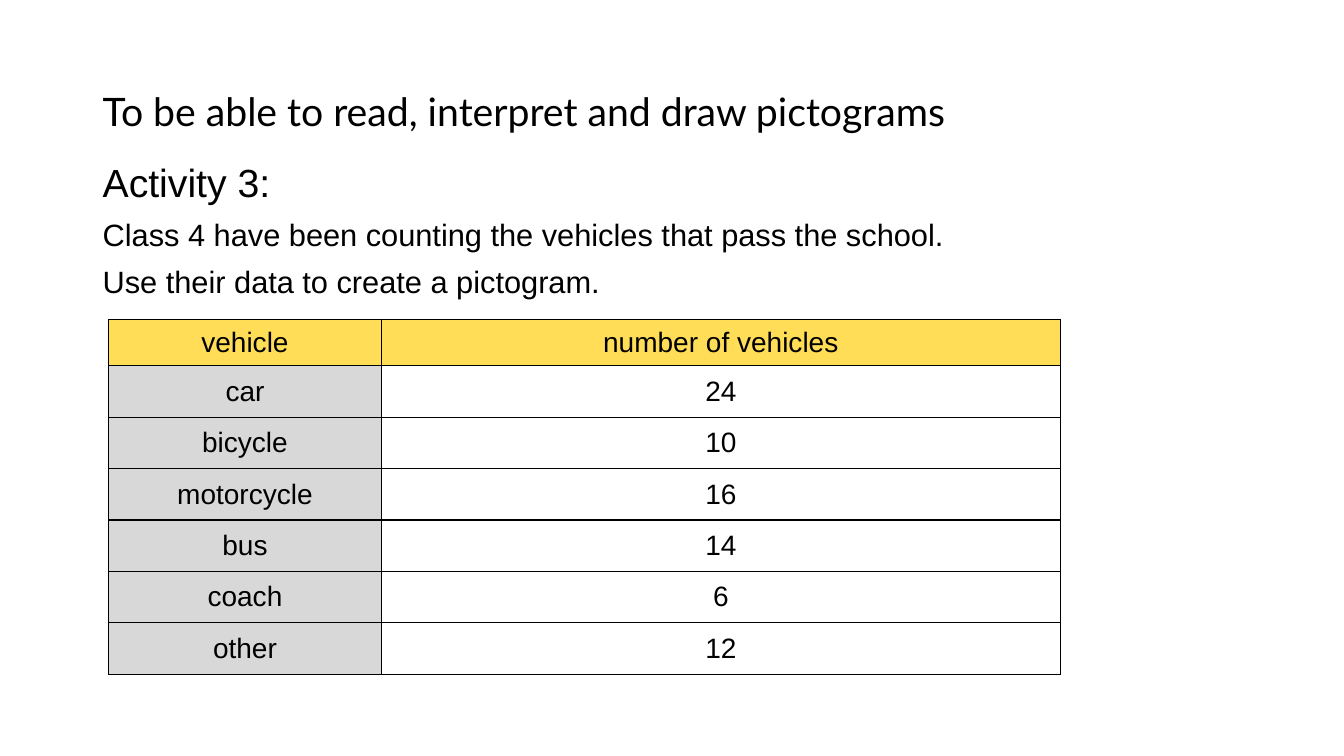
import pptx
import pptx.util
import pptx.oxml
import pptx.oxml.ns
import pptx.dml.color
import pptx.enum.text

PX = 9144
HUES = {"ink": "000000", "head": "FFDD57", "side": "D8D8D8", "cell": "FFFFFF"}
MID = pptx.enum.text.MSO_ANCHOR.MIDDLE
TOP = pptx.enum.text.MSO_ANCHOR.TOP
MARGINS = {"margin_left": 10 * PX, "margin_right": 10 * PX,
           "margin_top": 5 * PX, "margin_bottom": 5 * PX}
TITLE = [("To be able to read, interpret and draw pictograms", 28)]
TASK = [
    ("Activity 3:", 28),
    ("Class 4 have been counting the vehicles that pass the school.", 22),
    ("Use their data to create a pictogram.", 22),
]
COUNTS = [
    ("vehicle", "number of vehicles"),
    ("car", "24"),
    ("bicycle", "10"),
    ("motorcycle", "16"),
    ("bus", "14"),
    ("coach", "6"),
    ("other", "12"),
]


def tint(name):
    """Return the named colour."""
    return pptx.dml.color.RGBColor.from_string(HUES[name])


def apply(target, values):
    """Set each format value on the target."""
    for key, value in values.items():
        setattr(target, key, value)


def style(para, size, face):
    """Set the font of a paragraph."""
    apply(para.font, {"size": pptx.util.Pt(size), "name": face})
    para.font.color.rgb = tint("ink")


def add_text(slide, box, lines, face, anchor):
    """Place lines of text in the box."""
    frame = slide.shapes.add_textbox(*(n * PX for n in box)).text_frame
    apply(frame, {"word_wrap": True, "vertical_anchor": anchor, **MARGINS})
    for i, (text, size) in enumerate(lines):
        para = frame.add_paragraph() if i else frame.paragraphs[0]
        para.text = text
        gap = pptx.util.Pt(10 if i else 0)
        apply(para, {"line_spacing": 0.9, "space_before": gap})
        style(para, size, face)


def edge(cell):
    """Draw a thin line on each side of a cell."""
    props = cell._tc.get_or_add_tcPr()
    space = pptx.oxml.ns.nsdecls("a")
    for side in "LRTB":
        props.append(pptx.oxml.parse_xml(
            f'<a:ln{side} {space} w="12700"><a:solidFill>'
            f'<a:srgbClr val="{HUES["ink"]}"/></a:solidFill></a:ln{side}>'))


def add_counts(slide, box, rows, widths, heights):
    """Place the table of vehicle counts in the box."""
    frame = slide.shapes.add_table(len(rows), len(widths), *(n * PX for n in box))
    table = frame.table
    table.horz_banding = False
    for col, width in zip(table.columns, widths):
        col.width = width * PX
    for row, height in zip(table.rows, heights):
        row.height = height * PX
    for r, row in enumerate(rows):
        for c, text in enumerate(row):
            cell = table.cell(r, c)
            cell.text = text
            apply(cell, {"vertical_anchor": MID, **MARGINS})
            edge(cell)
            cell.fill.solid()
            name = "head" if r == 0 else "side" if c == 0 else "cell"
            cell.fill.fore_color.rgb = tint(name)
            para = cell.text_frame.paragraphs[0]
            para.alignment = pptx.enum.text.PP_ALIGN.CENTER
            style(para, 20, "Arial")
            para.font.bold = False


def main():
    """Build and save the slide."""
    deck = pptx.Presentation()
    apply(deck, {"slide_width": 1333 * PX, "slide_height": 750 * PX})
    slide = deck.slides.add_slide(deck.slide_layouts[6])
    add_text(slide, (92, 40, 960, 145), TITLE, "Lato", MID)
    add_text(slide, (92, 157, 1181, 510), TASK, "Arial", TOP)
    widths, heights = (270, 674), [46] + [51] * 6
    box = (108, 317, sum(widths), sum(heights))
    add_counts(slide, box, COUNTS, widths, heights)
    deck.save("out.pptx")


if __name__ == "__main__":
    main()
